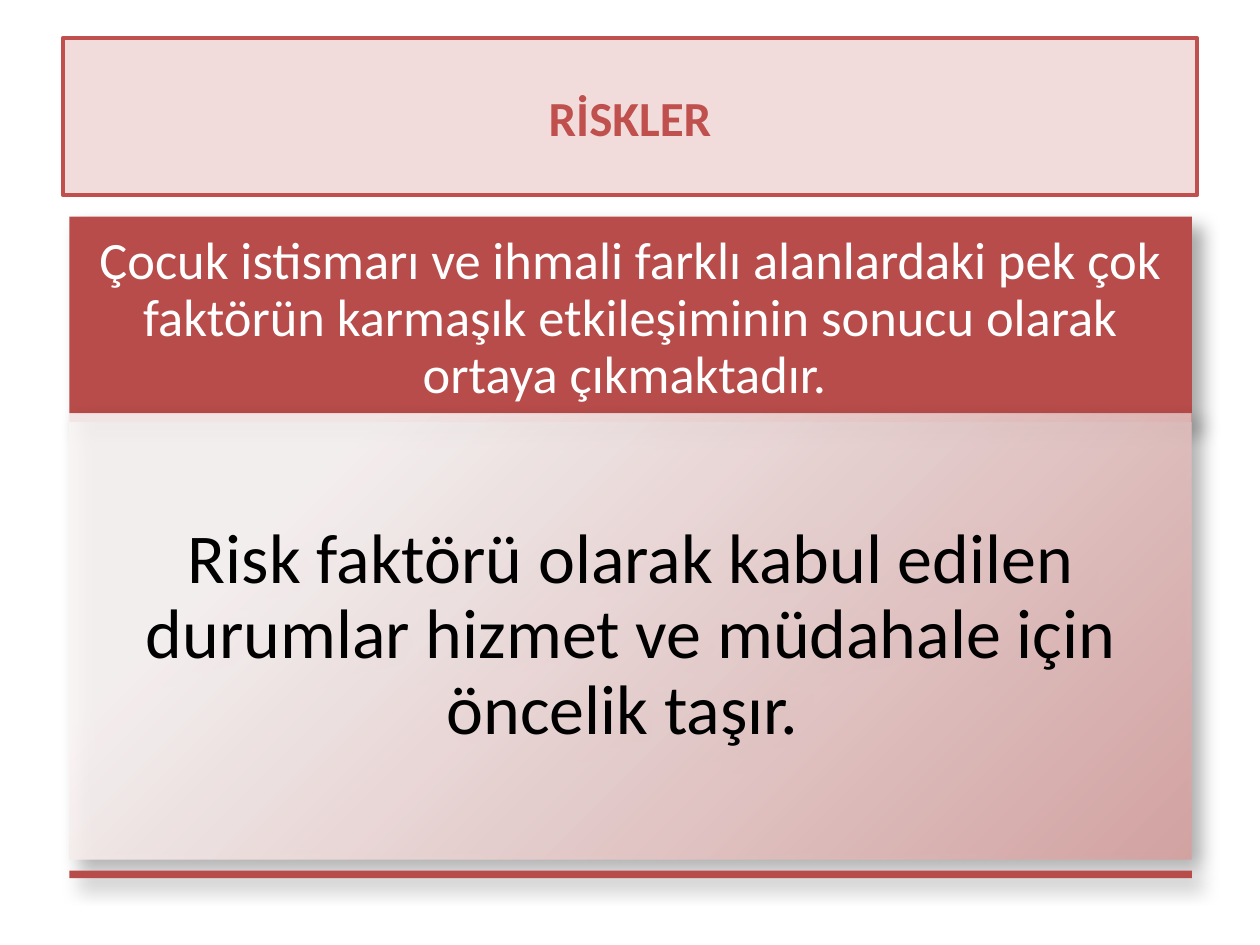
from lxml import etree
from pptx import Presentation
from pptx.dml.color import RGBColor
from pptx.enum.shapes import MSO_SHAPE as Shape
from pptx.enum.text import MSO_ANCHOR as Anchor, PP_ALIGN as Align
from pptx.oxml.ns import qn
from pptx.util import Inches, Pt

RED = RGBColor(0xC0, 0x50, 0x4D)
DEEP_RED = RGBColor(0xB7, 0x4C, 0x4A)
PINK = RGBColor(0xF2, 0xDC, 0xDB)
PALE = RGBColor(0xFA, 0xF5, 0xF5)
ROSE = RGBColor(0xD5, 0xA1, 0xA0)
WHITE = RGBColor(0xFF, 0xFF, 0xFF)
BLACK = RGBColor(0, 0, 0)

LEFT, WIDTH = 0.55, 8.91


def add_xml(parent, tag, **attributes):
    return etree.SubElement(parent, qn(tag), {k: str(v) for k, v in attributes.items()})


class RiskSlide:
    font_name = "Calibri"

    def __init__(self, slide):
        self.slide = slide

    def title(self, text):
        box = self.slide.shapes.add_shape(
            Shape.ROUNDED_RECTANGLE, Inches(0.5), Inches(0.3), Inches(9), Inches(1.25))
        box.adjustments[0] = 0
        box.fill.solid()
        box.fill.fore_color.rgb = PINK
        box.line.color.rgb = RED
        box.line.width = Pt(2.25)
        box.shadow.inherit = False
        self.label(box, text, 28, RED, bold=True)

    def band(self, top, height, color=DEEP_RED):
        """Full-width borderless rectangle with a soft shadow."""
        band = self.slide.shapes.add_shape(
            Shape.RECTANGLE, Inches(LEFT), Inches(top), Inches(WIDTH), Inches(height))
        band.fill.solid()
        band.fill.fore_color.rgb = color
        band.line.fill.background()
        band.shadow.inherit = False
        effects = band._element.spPr.find(qn("a:effectLst"))
        shadow = add_xml(effects, "a:outerShdw", blurRad=Pt(10.2), dist=Pt(8),
                         dir=45 * 60000, algn="tl", rotWithShape=0)
        shadow_color = add_xml(shadow, "a:srgbClr", val=BLACK)
        add_xml(shadow_color, "a:alpha", val=35000)
        return band

    def radial_fill(self, band, stops):
        """Fill outward from the top-left corner, at 90% opacity."""
        band.fill.gradient()
        for stop, (position, color) in zip(band.fill.gradient_stops, stops):
            stop.position = position
            stop.color.rgb = color
        gradient = band._element.spPr.find(qn("a:gradFill"))
        for stop_color in gradient.iter(qn("a:srgbClr")):
            add_xml(stop_color, "a:alpha", val=90000)
        gradient.remove(gradient.find(qn("a:lin")))
        spread = add_xml(gradient, "a:path", path="circle")
        add_xml(spread, "a:fillToRect", l=-15000, t=-15000, r=115000, b=115000)

    def label(self, shape, text, size, color, bold=False, inset=0.1, spacing=1.0):
        frame = shape.text_frame
        frame.word_wrap = True
        frame.vertical_anchor = Anchor.MIDDLE
        frame.margin_left = frame.margin_right = Inches(inset)
        frame.margin_top = frame.margin_bottom = Inches(inset)
        paragraph = frame.paragraphs[0]
        paragraph.text = text
        paragraph.alignment = Align.CENTER
        paragraph.line_spacing = spacing
        font = paragraph.font
        font.name, font.size, font.bold = self.font_name, Pt(size), bold
        font.color.rgb = color


def main():
    deck = Presentation()
    deck.slide_width, deck.slide_height = Inches(10), Inches(7.5)
    risks = RiskSlide(deck.slides.add_slide(deck.slide_layouts[6]))

    risks.title("RİSKLER")

    cause = risks.band(1.72, 1.63)
    risks.label(cause, "Çocuk istismarı ve ihmali farklı alanlardaki pek çok faktörün "
                "karmaşık etkileşiminin sonucu olarak ortaya çıkmaktadır. ",
                30, WHITE, inset=0.12, spacing=0.9)

    priority = risks.band(3.28, 3.54)
    risks.radial_fill(priority, [(0.2, PALE), (1, ROSE)])
    risks.label(priority, "Risk faktörü olarak kabul edilen durumlar hizmet ve "
                "müdahale için öncelik taşır. ",
                40, BLACK, inset=0.17, spacing=0.9)

    risks.band(6.91, 0.06)

    deck.save("out.pptx")


if __name__ == "__main__":
    main()
